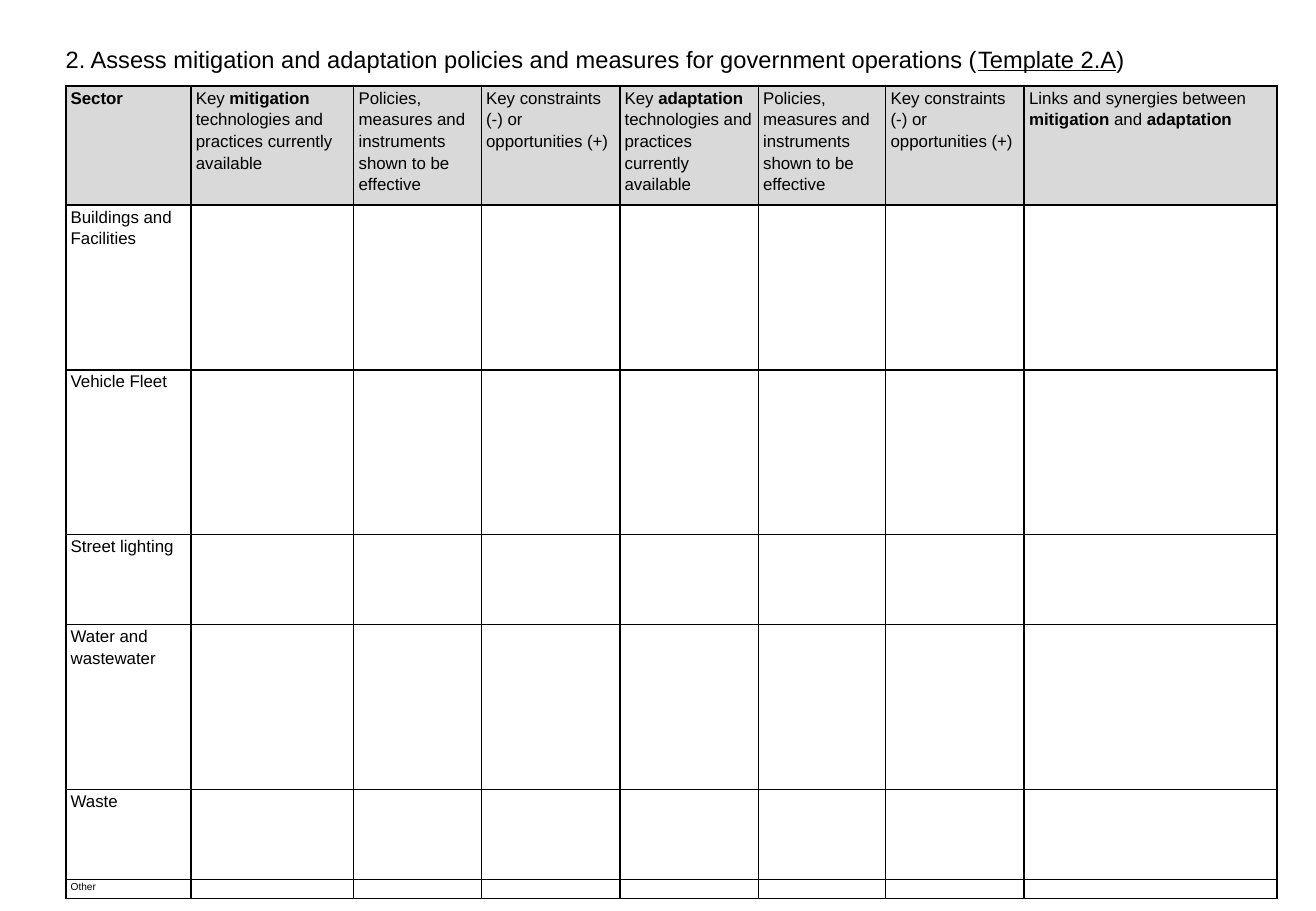
from lxml import etree
from pptx import Presentation
from pptx.dml.color import RGBColor
from pptx.enum.text import MSO_ANCHOR, MSO_AUTO_SIZE, PP_ALIGN
from pptx.oxml.ns import qn
from pptx.util import Pt

TOP = MSO_ANCHOR.TOP
GROW = MSO_AUTO_SIZE.SHAPE_TO_FIT_TEXT
LEFT = PP_ALIGN.LEFT

COLORS = {"ink": "000000", "header": "D9D9D9"}
PARAGRAPH = {"alignment": LEFT, "line_spacing": 1.15, "space_after": Pt(10)}
FRAME = {"word_wrap": True, "vertical_anchor": TOP, "auto_size": GROW}
CELL = {"margin_left": Pt(2.9), "margin_right": Pt(2.9), "margin_top": 0,
        "margin_bottom": 0, "vertical_anchor": TOP}

POLICIES = "Policies, measures and instruments shown to be effective"
CONSTRAINTS = "Key constraints (-) or opportunities (+)"
TECHNOLOGIES = "Key *{}* technologies and practices currently available"
HEADERS = ["*Sector*", TECHNOLOGIES.format("mitigation"), POLICIES, CONSTRAINTS,
           TECHNOLOGIES.format("adaptation"), POLICIES, CONSTRAINTS,
           "Links and synergies between *mitigation* and *adaptation*"]
SECTORS = ["Buildings and Facilities", "Vehicle Fleet", "Street lighting",
           "Water and wastewater", "Waste", "Other"]
WIDTHS = [74.2, 96.5, 75.6, 82.1, 82.1, 75.6, 82.1, 149.8]
HEIGHTS = [70.6, 97.7, 97.7, 53.3, 97.7, 53.3, 11.4]
SIZES = [10] * len(SECTORS) + [6]
GROUP_STARTS = (4, 7)


def assign(target, values):
    """Set every attribute in values on target."""
    for name, value in values.items():
        setattr(target, name, value)


class Deck:
    """Holds the presentation, its text style and the current slide."""

    def __init__(self, width, height, font="Arial"):
        """Start a one-slide deck of the given size."""
        self.prs = Presentation()
        assign(self.prs, {"slide_width": Pt(width), "slide_height": Pt(height)})
        self.s = self.prs.slides.add_slide(self.prs.slide_layouts[5])
        self.font = font

    def text(self, p, text, size, mark="bold"):
        """Fill a paragraph, giving the mark to parts between asterisks."""
        assign(p, PARAGRAPH)
        if not text:
            etree.SubElement(p._p, qn("a:endParaRPr"), sz=str(size * 100))
        for i, part in enumerate(text.split("*")):
            if part:
                r = p.add_run()
                r.text = part
                assign(r.font, {"name": self.font, "size": Pt(size), "bold": False})
                r.font.color.rgb = RGBColor.from_string(COLORS["ink"])
                setattr(r.font, mark, i % 2 == 1)

    def title(self, text, left, top, width, height, size):
        """Place and fill the title."""
        sp = self.s.shapes.title
        assign(sp, {"left": Pt(left), "top": Pt(top),
                    "width": Pt(width), "height": Pt(height)})
        assign(sp.text_frame, FRAME)
        self.text(sp.text_frame.paragraphs[0], text, size, "underline")

    def borders(self, cell, **widths):
        """Draw the cell's sides, in the order L, R, T, B."""
        tc_pr = cell._tc.get_or_add_tcPr()
        for i, (side, width) in enumerate(widths.items()):
            ln = etree.Element(qn("a:ln" + side), w=str(Pt(width)))
            fill = etree.SubElement(ln, qn("a:solidFill"))
            etree.SubElement(fill, qn("a:srgbClr"), val=COLORS["ink"])
            tc_pr.insert(i, ln)

    def table(self, rows, left, top):
        """Add the ruled table with a shaded header row."""
        tbl = self.s.shapes.add_table(
            len(rows), len(WIDTHS), Pt(left), Pt(top),
            Pt(sum(WIDTHS)), Pt(sum(HEIGHTS))).table
        assign(tbl, {"first_row": False, "horz_banding": False})
        for column, width in zip(tbl.columns, WIDTHS):
            column.width = Pt(width)
        for y, texts in enumerate(rows):
            tbl.rows[y].height = Pt(HEIGHTS[y])
            for x, text in enumerate(texts):
                cell = tbl.cell(y, x)
                assign(cell, CELL)
                self.text(cell.text_frame.paragraphs[0], text, SIZES[y])
                if y == 0:
                    cell.fill.solid()
                    cell.fill.fore_color.rgb = RGBColor.from_string(COLORS["header"])
                else:
                    cell.fill.background()
                self.borders(cell, L=1.5 if x in GROUP_STARTS else 1,
                             R=1.5 if x + 1 in GROUP_STARTS else 1, T=1, B=1)


def main():
    """Build and save the slide."""
    deck = Deck(780, 540)
    blanks = [""] * (len(HEADERS) - 1)
    deck.table([HEADERS] + [[sector] + blanks for sector in SECTORS], 39, 51)
    deck.title("2. Assess mitigation and adaptation policies and measures for "
               "government operations (*Template 2.A*)", 31.7, 20.2, 707, 25.2, 14)
    deck.prs.save("out.pptx")


if __name__ == "__main__":
    main()
